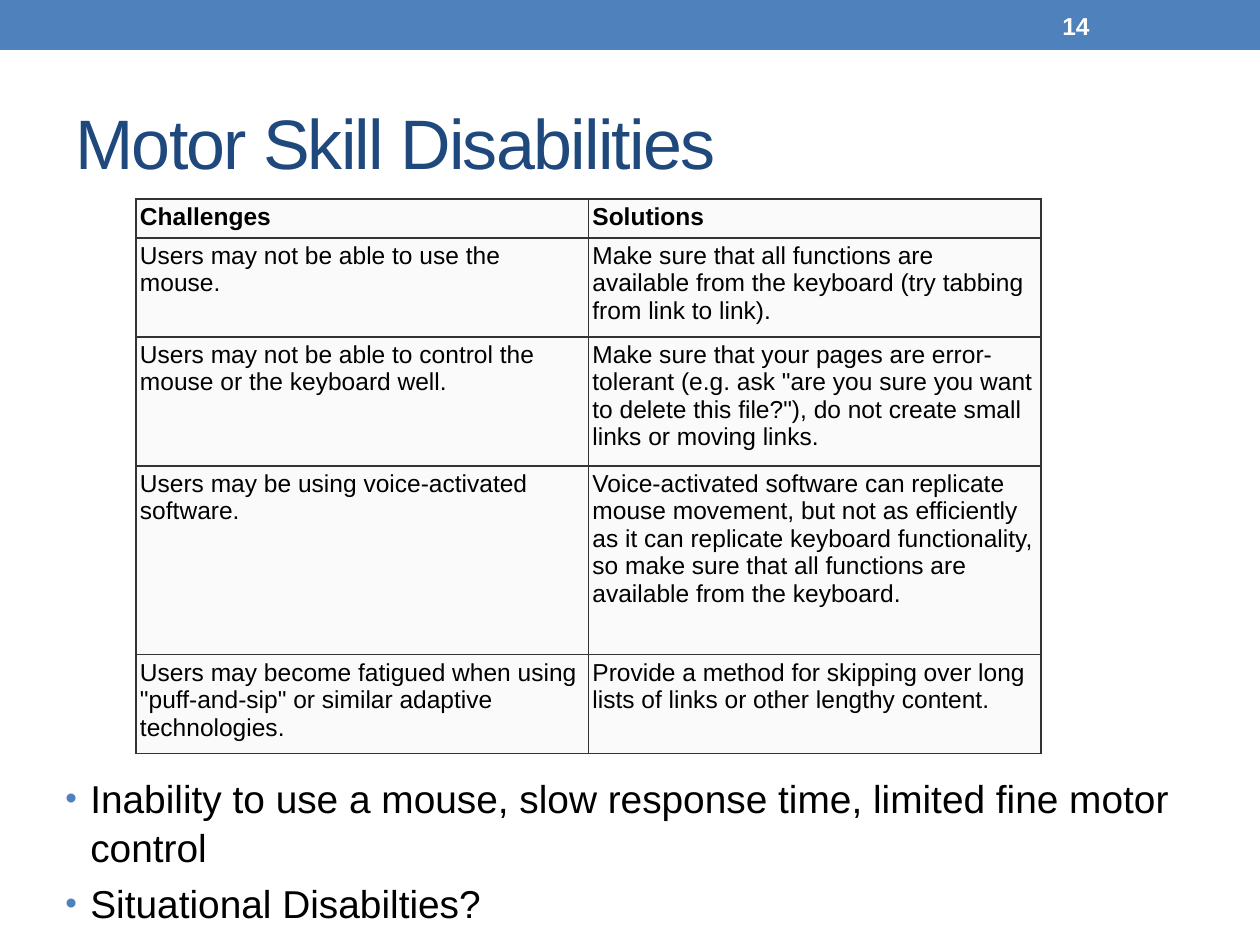
from dataclasses import dataclass

from lxml import etree
from pptx import Presentation
from pptx import util as u
from pptx.dml.color import RGBColor
from pptx.enum import shapes, text
from pptx.oxml.ns import qn

PX = u.Inches(1) // 126  # one scale: 126 px to the inch


@dataclass(frozen=True)
class Theme:
    font: str = "Arial"
    accent: str = "4F81BD"
    title: str = "1F497D"
    ink: str = "000000"
    white: str = "FFFFFF"
    cell: str = "FAFAFA"
    border: str = "333333"
    title_size: float = 40
    body_size: float = 22.2
    small_size: float = 14


THEME = Theme()

ROW_HEIGHTS = [39, 99, 129, 189, 99]
ROWS = [
    ("Challenges", "Solutions"),
    ("Users may not be able to use the mouse.",
     "Make sure that all functions are available from the keyboard "
     "(try tabbing from link to link)."),
    ("Users may not be able to control the mouse or the keyboard well.",
     'Make sure that your pages are error-tolerant (e.g. ask "are you sure '
     'you want to delete this file?"), do not create small links or moving links.'),
    ("Users may be using voice-activated software.",
     "Voice-activated software can replicate mouse movement, but not as "
     "efficiently as it can replicate keyboard functionality, so make sure "
     "that all functions are available from the keyboard."),
    ('Users may become fatigued when using "puff-and-sip" or similar '
     "adaptive technologies.",
     "Provide a method for skipping over long lists of links or other "
     "lengthy content."),
]
BULLETS = [
    "Inability to use a mouse, slow response time, limited fine motor control",
    "Situational Disabilties?",
]


def px(*lengths):
    return [u.Emu(length * PX) for length in lengths]


def add_child(parent, tag, **attributes):
    child = etree.SubElement(parent, qn(tag))
    for name, value in attributes.items():
        child.set(name, str(value))
    return child


def write(para, words, *, size, color=THEME.ink, bold=False, tracking=None):
    para.alignment = text.PP_ALIGN.LEFT
    span = para.add_run()
    span.text = words
    span.font.name = THEME.font
    span.font.size = u.Pt(size)
    span.font.bold = bold
    span.font.color.rgb = RGBColor.from_string(color)
    if tracking is not None:
        span.font._element.set("spc", str(tracking))


def add_text(page, place, lines, *, anchor=text.MSO_ANCHOR.TOP, bulleted=False, **style):
    frame = page.shapes.add_textbox(*px(*place)).text_frame
    frame.word_wrap = True
    frame.vertical_anchor = anchor
    for index, words in enumerate(lines):
        para = frame.add_paragraph() if index else frame.paragraphs[0]
        if bulleted:
            add_bullet(para)
        write(para, words, **style)


def add_bullet(para):
    para.line_spacing = 1.05
    para.space_before = u.Pt(4)
    properties = para._p.get_or_add_pPr()
    indent = 25 * PX
    properties.set("marL", str(indent))
    properties.set("indent", str(-indent))
    color = add_child(properties, "a:buClr")
    add_child(color, "a:srgbClr", val=THEME.accent)
    add_child(properties, "a:buSzPct", val=85000)
    add_child(properties, "a:buFont", typeface=THEME.font)
    add_child(properties, "a:buChar", char="•")


def add_band(page, place):
    band = page.shapes.add_shape(shapes.MSO_SHAPE.RECTANGLE, *px(*place))
    band.shadow.inherit = False
    band.fill.solid()
    band.fill.fore_color.rgb = RGBColor.from_string(THEME.accent)
    band.line.fill.background()


def format_cell(cell):
    (inset,) = px(4)
    cell.margin_left = cell.margin_right = inset
    cell.margin_top = cell.margin_bottom = inset
    properties = cell._tc.get_or_add_tcPr()
    for side in ("a:lnL", "a:lnR", "a:lnT", "a:lnB"):
        edge = add_child(properties, side, w=u.Pt(0.75))
        add_child(add_child(edge, "a:solidFill"), "a:srgbClr", val=THEME.border)
    cell.fill.solid()
    cell.fill.fore_color.rgb = RGBColor.from_string(THEME.cell)


def add_grid(page, place, rows, heights):
    table = page.shapes.add_table(len(rows), len(rows[0]), *px(*place)).table
    for row, height in zip(table.rows, px(*heights)):
        row.height = height
    for r, words_in_row in enumerate(rows):
        for c, words in enumerate(words_in_row):
            cell = table.cell(r, c)
            format_cell(cell)
            write(cell.text_frame.paragraphs[0], words,
                  size=THEME.small_size, bold=r == 0)


def main():
    deck = Presentation()
    deck.slide_width, deck.slide_height = px(1260, 945)
    page = deck.slides.add_slide(deck.slide_layouts[6])
    middle = text.MSO_ANCHOR.MIDDLE

    # Top band, title and page number
    add_band(page, (0, 0, 1260, 50))
    add_text(page, (63, 73, 1134, 136), ["Motor Skill Disabilities"], anchor=middle,
             size=THEME.title_size, color=THEME.title, tracking=-100)
    add_text(page, (1050, 3, 147, 45), ["14"], anchor=middle,
             size=THEME.small_size, color=THEME.white, bold=True)

    # Bullets below the table
    add_text(page, (53, 766, 1134, 136), BULLETS, bulleted=True, size=THEME.body_size)

    # Challenges and solutions
    add_grid(page, (136, 199, 905, sum(ROW_HEIGHTS)), ROWS, ROW_HEIGHTS)

    deck.save("out.pptx")


if __name__ == "__main__":
    main()
